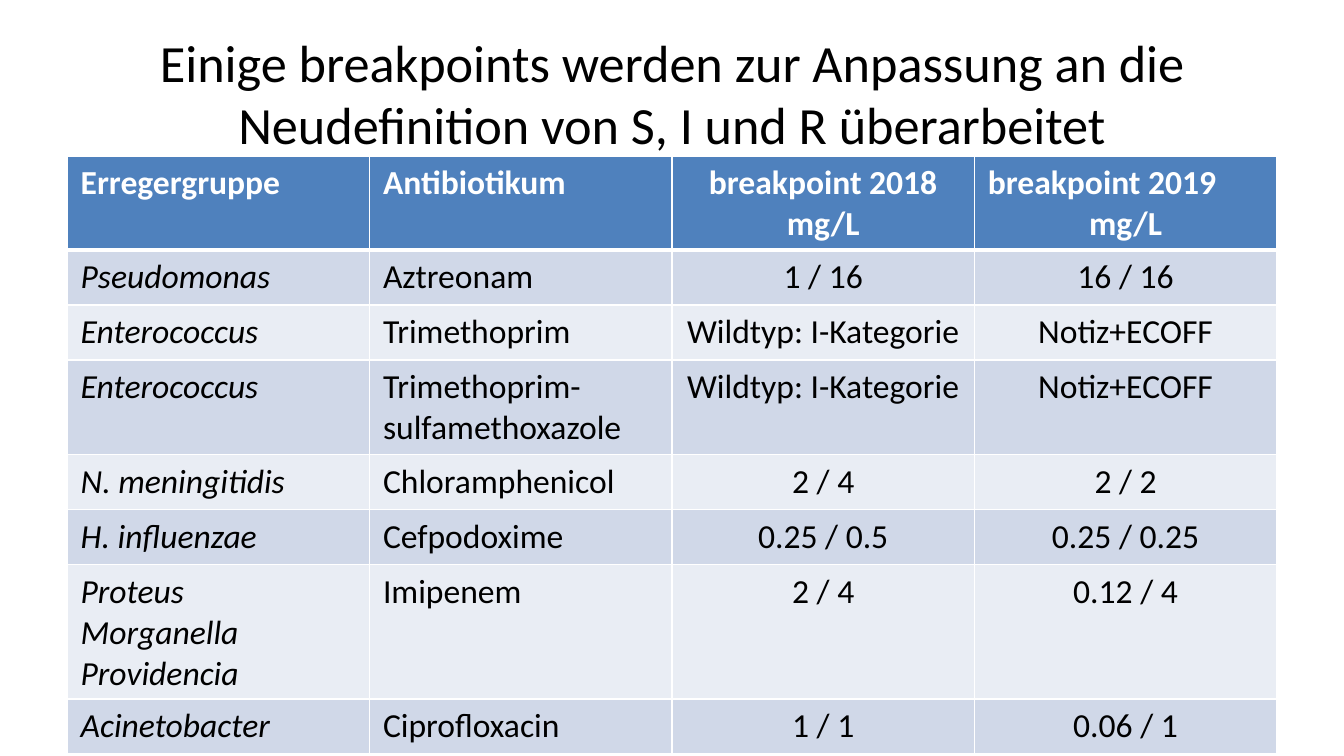
from dataclasses import dataclass

from lxml.etree import SubElement
from pptx import Presentation
from pptx.dml.color import RGBColor as Rgb
from pptx.enum.text import MSO_ANCHOR as Anchor, PP_ALIGN as Align
from pptx.oxml.ns import qn
from pptx.util import Inches, Pt

TITLE = "Einige breakpoints werden zur Anpassung an die Neudefinition von S, I und R überarbeitet"
HEADINGS = ("Erregergruppe", "Antibiotikum", "breakpoint 2018\nmg/L", "breakpoint 2019")
UNIT_2019 = "mg/L"  # a centred paragraph below the left-aligned last heading
BREAKPOINTS = [
    ("Pseudomonas", "Aztreonam", "1 / 16", "16 / 16"),
    ("Enterococcus", "Trimethoprim", "Wildtyp: I-Kategorie", "Notiz+ECOFF"),
    ("Enterococcus", "Trimethoprim-sulfamethoxazole", "Wildtyp: I-Kategorie", "Notiz+ECOFF"),
    ("N. meningitidis", "Chloramphenicol", "2 / 4", "2 / 2"),
    ("H. influenzae", "Cefpodoxime", "0.25 / 0.5", "0.25 / 0.25"),
    ("Proteus\nMorganella\nProvidencia", "Imipenem", "2 / 4", "0.12 / 4"),
    ("Acinetobacter", "Ciprofloxacin", "1 / 1", "0.06 / 1"),
]
COLUMN_ALIGN = (Align.LEFT, Align.LEFT, Align.CENTER, Align.CENTER)
HEADING_ALIGN = (Align.LEFT, Align.LEFT, Align.CENTER, Align.LEFT)


@dataclass(frozen=True)
class Theme:
    font: str = "Calibri"
    title_size: int = 28
    table_size: int = 18
    text: str = "000000"
    heading_text: str = "FFFFFF"
    heading_fill: str = "4F81BD"
    bands: tuple = ("D0D8E8", "E9EDF4")
    rule: str = "FFFFFF"
    thin: int = 1
    thick: int = 3


THEME = Theme()
SLIDE_W = 10
SLIDE_H = SLIDE_W * 9 / 16
MARGIN = SLIDE_W * 0.05
CONTENT_W = SLIDE_W - 2 * MARGIN
TITLE_TOP, TITLE_H = 0.22, 0.94
TABLE_TOP, ROW_H = 1.16, 0.41


def write(paragraph, text, align, size, color, bold=False, italic=False):
    """Fill a paragraph, turning each newline into a line break."""
    paragraph.alignment = align
    for number, line in enumerate(text.split("\n")):
        if number:
            paragraph.add_line_break()
        run = paragraph.add_run()
        run.text = line
        font = run.font
        font.name, font.size = THEME.font, Pt(size)
        font.bold, font.italic = bold, italic
        font.color.rgb = Rgb.from_string(color)


def add_borders(cell, top, bottom):
    properties = cell._tc.get_or_add_tcPr()
    widths = {"a:lnL": THEME.thin, "a:lnR": THEME.thin, "a:lnT": top, "a:lnB": bottom}
    for side, width in widths.items():
        line = SubElement(properties, qn(side), w=str(Pt(width)))
        SubElement(SubElement(line, qn("a:solidFill")), qn("a:srgbClr"), val=THEME.rule)


def paint(cell, color):
    cell.fill.solid()
    cell.fill.fore_color.rgb = Rgb.from_string(color)


def add_title(slide):
    frame = slide.shapes.add_textbox(
        Inches(MARGIN), Inches(TITLE_TOP), Inches(CONTENT_W), Inches(TITLE_H)
    ).text_frame
    frame.word_wrap = True
    frame.vertical_anchor = Anchor.MIDDLE
    write(frame.paragraphs[0], TITLE, Align.CENTER, THEME.title_size, THEME.text)


def add_breakpoint_table(slide):
    row_count = len(BREAKPOINTS) + 1
    table = slide.shapes.add_table(
        row_count, len(HEADINGS), Inches(MARGIN), Inches(TABLE_TOP),
        Inches(CONTENT_W), Inches(ROW_H * row_count),
    ).table

    for column, (heading, align) in enumerate(zip(HEADINGS, HEADING_ALIGN)):
        cell = table.cell(0, column)
        add_borders(cell, THEME.thin, THEME.thick)
        paint(cell, THEME.heading_fill)
        write(cell.text_frame.paragraphs[0], heading, align,
              THEME.table_size, THEME.heading_text, bold=True)
    unit = table.cell(0, len(HEADINGS) - 1).text_frame.add_paragraph()
    write(unit, UNIT_2019, Align.CENTER, THEME.table_size, THEME.heading_text, bold=True)

    for row, entries in enumerate(BREAKPOINTS, start=1):
        for column, (entry, align) in enumerate(zip(entries, COLUMN_ALIGN)):
            cell = table.cell(row, column)
            add_borders(cell, THEME.thick if row == 1 else THEME.thin, THEME.thin)
            paint(cell, THEME.bands[(row - 1) % 2])
            write(cell.text_frame.paragraphs[0], entry, align,
                  THEME.table_size, THEME.text, italic=column == 0)


def main():
    deck = Presentation()
    deck.slide_width, deck.slide_height = Inches(SLIDE_W), Inches(SLIDE_H)
    slide = deck.slides.add_slide(deck.slide_layouts[6])
    add_title(slide)
    add_breakpoint_table(slide)
    deck.save("out.pptx")


if __name__ == "__main__":
    main()
